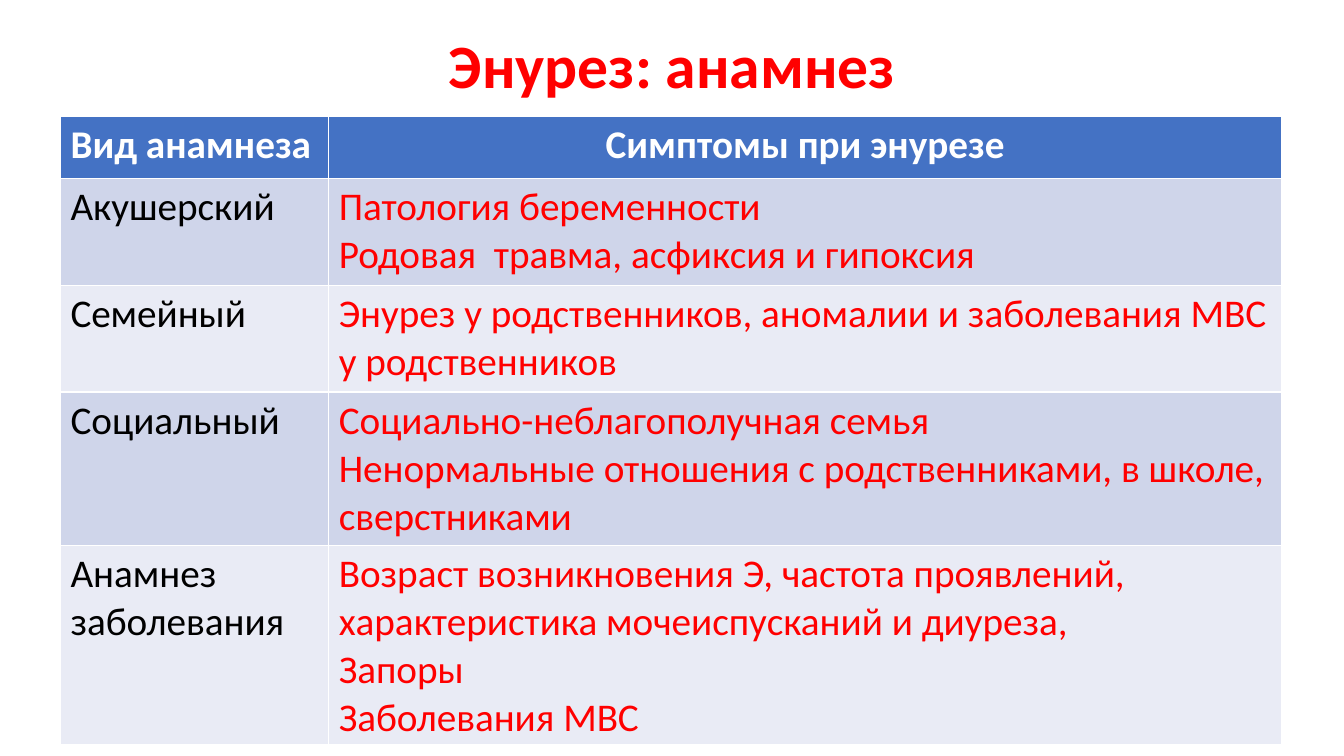
from pptx import Presentation
from pptx.dml.color import RGBColor
from pptx.enum.text import MSO_ANCHOR, PP_ALIGN
from pptx.util import Emu, Pt

RED, BLACK, WHITE = "FF0000", "000000", "FFFFFF"
HEADER_FILL = "4472C4"
BAND_FILLS = ["E9EBF5", "CFD5EA"]


def px(count):
    """Convert px, 100 to the inch, to EMU."""
    return Emu(count * 9144)


def write(frame, text, size, color, bold=False, align=PP_ALIGN.LEFT):
    """Fill the frame, one paragraph for each line of text."""
    frame.word_wrap = True
    frame.text = text
    for paragraph in frame.paragraphs:
        paragraph.alignment = align
        paragraph.font.name = "Calibri"
        paragraph.font.size = Pt(size)
        paragraph.font.bold = bold
        paragraph.font.color.rgb = RGBColor.from_string(color)


presentation = Presentation()
presentation.slide_width = px(1333)
presentation.slide_height = px(750)
slide = presentation.slides.add_slide(presentation.slide_layouts[6])

title = slide.shapes.add_textbox(px(217), px(30), px(900), px(77)).text_frame
write(title, "Энурез: анамнез", 44, RED, True, PP_ALIGN.CENTER)
title.vertical_anchor = MSO_ANCHOR.MIDDLE
title.paragraphs[0].line_spacing = 0.9

history = [
    ("Вид анамнеза", "Симптомы при энурезе"),
    ("Акушерский", "Патология беременности\nРодовая  травма, асфиксия и гипоксия"),
    ("Семейный", "Энурез у родственников, аномалии и заболевания МВС у родственников"),
    ("Социальный", "Социально-неблагополучная семья\n"
     "Ненормальные отношения с родственниками, в школе, сверстниками"),
    ("Анамнез заболевания", "Возраст возникновения Э, частота проявлений, "
     "характеристика мочеиспусканий и диуреза,\nЗапоры\nЗаболевания МВС"),
]
column_widths = [266, 945]
row_heights = [62, 106, 106, 152, 198]

table = slide.shapes.add_table(
    len(history), len(column_widths), px(60), px(115),
    px(sum(column_widths)), px(sum(row_heights))).table
for column, width in zip(table.columns, column_widths):
    column.width = px(width)

for row_index, (kind, symptoms) in enumerate(history):
    table.rows[row_index].height = px(row_heights[row_index])
    kind_cell, symptoms_cell = table.rows[row_index].cells
    if row_index == 0:
        fill = HEADER_FILL
        write(kind_cell.text_frame, kind, 28, WHITE, True)
        write(symptoms_cell.text_frame, symptoms, 28, WHITE, True, PP_ALIGN.CENTER)
    else:
        fill = BAND_FILLS[row_index % 2]
        write(kind_cell.text_frame, kind, 28, BLACK)
        write(symptoms_cell.text_frame, symptoms, 28, RED)
    for cell in (kind_cell, symptoms_cell):
        cell.fill.solid()
        cell.fill.fore_color.rgb = RGBColor.from_string(fill)

presentation.save("out.pptx")
